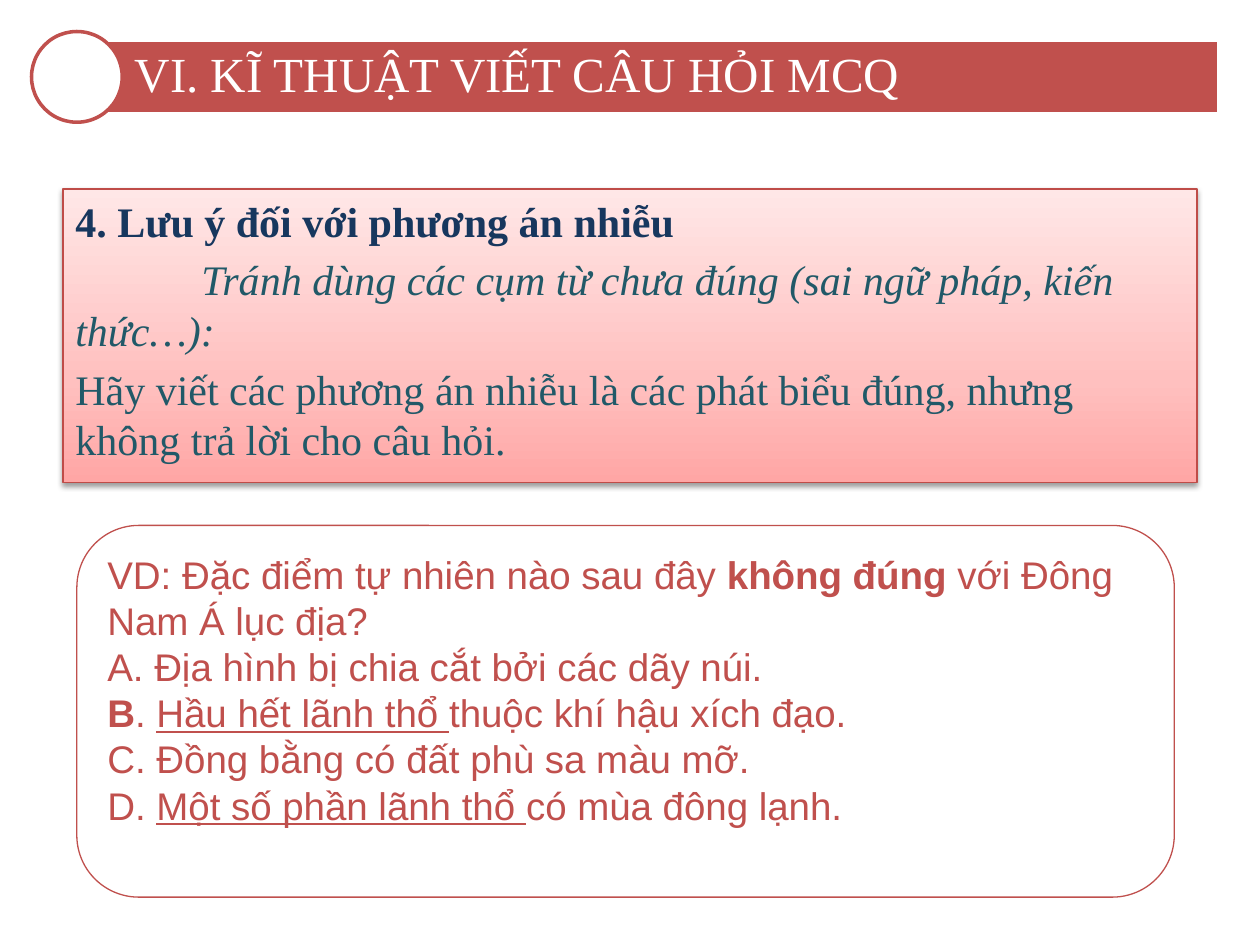
from lxml.etree import SubElement
from pptx import Presentation
from pptx.dml.color import RGBColor as RGB
from pptx.enum.shapes import MSO_SHAPE as SHAPE
from pptx.enum.text import MSO_ANCHOR as ANCHOR, PP_ALIGN as ALIGN
from pptx.oxml import parse_xml
from pptx.oxml.ns import nsdecls, qn
from pptx.util import Inches, Pt

COLORS = {
    "white": "FFFFFF",
    "red": "C0504D",
    "border": "BF4C48",
    "navy": "17375E",
    "teal": "215968",
    "shadow": "000000",
}
PINKS = [(0, "FFA6A5"), (35, "FFC0BF"), (100, "FFE7E7")]
SERIF, SANS = "Times New Roman", "Arial"


class Deck:
    def __init__(self):
        self.prs = Presentation()
        self.prs.slide_width, self.prs.slide_height = Inches(10), Inches(7.5)
        self.slide = self.prs.slides.add_slide(self.prs.slide_layouts[6])

    def shape(self, kind, box, line, width, fill=None):
        s = self.slide.shapes.add_shape(kind, *map(Inches, box))
        s.shadow.inherit = False
        s.line.color.rgb = RGB.from_string(COLORS[line])
        s.line.width = Pt(width)
        if fill:
            s.fill.solid()
            s.fill.fore_color.rgb = RGB.from_string(COLORS[fill])
        else:
            s.fill.background()
        return s

    def gradient(self, s, stops, angle):
        s.fill.gradient()
        grad = s._element.spPr.find(qn("a:gradFill"))
        gs_list = grad.find(qn("a:gsLst"))
        for gs in list(gs_list):
            gs_list.remove(gs)
        for pos, color in stops:
            gs = SubElement(gs_list, qn("a:gs"), pos=str(pos * 1000))
            SubElement(gs, qn("a:srgbClr"), val=color)
        grad.find(qn("a:lin")).set("ang", str(angle * 60000))

    def drop_shadow(self, s, blur, dist, alpha):
        effects = s._element.spPr.find(qn("a:effectLst"))
        effects.append(parse_xml(
            f'<a:outerShdw {nsdecls("a")} blurRad="{Pt(blur)}" dist="{Pt(dist)}" '
            f'dir="5400000" rotWithShape="0"><a:srgbClr val="{COLORS["shadow"]}">'
            f'<a:alpha val="{alpha * 1000}"/></a:srgbClr></a:outerShdw>'))

    def text(self, s, paragraphs, font, size, color, anchor=ANCHOR.MIDDLE,
             insets=(0.1, 0.05, 0.1, 0.05), before=0, spacing=1.0):
        tf = s.text_frame
        tf.word_wrap = True
        tf.vertical_anchor = anchor
        (tf.margin_left, tf.margin_top,
         tf.margin_right, tf.margin_bottom) = map(Inches, insets)
        for i, runs in enumerate(paragraphs):
            p = tf.paragraphs[0] if i == 0 else tf.add_paragraph()
            p.alignment = ALIGN.LEFT
            p.space_before = Pt(before)
            p.line_spacing = spacing
            for words, style in runs:
                r = p.add_run()
                r.text = words
                r.font.name, r.font.size = font, Pt(size)
                r.font.color.rgb = RGB.from_string(COLORS[style.get("color", color)])
                r.font.bold = style.get("bold", False)
                r.font.italic = style.get("italic", False)
                r.font.underline = style.get("underline", False)
        return tf

    def indent(self, p, inches):
        p._p.get_or_add_pPr().set("indent", str(Inches(inches)))


def main():
    plain, bold, underline = {}, {"bold": True}, {"underline": True}
    deck = Deck()

    banner = deck.shape(SHAPE.RECTANGLE, (0.61, 0.32, 9.06, 0.58), "white", 2, "red")
    deck.text(banner, [[("VI. KĨ THUẬT VIẾT CÂU HỎI MCQ", plain)]], SERIF, 28, "white",
              insets=(0.46, 0.06, 0.06, 0.06), spacing=0.9)
    deck.shape(SHAPE.OVAL, (0.25, 0.25, 0.72, 0.72), "red", 2, "white")

    advice = deck.shape(SHAPE.RECTANGLE, (0.5, 1.5, 9, 2.33), "border", 0.75)
    deck.gradient(advice, PINKS, 270)
    deck.drop_shadow(advice, 3.1, 1.6, 38)
    tf = deck.text(advice, [
        [("4. Lưu ý đối với phương án nhiễu", {"bold": True, "color": "navy"})],
        [("Tránh dùng các cụm từ chưa đúng (sai ngữ pháp, kiến thức…):", {"italic": True})],
        [("Hãy viết các phương án nhiễu là các phát biểu đúng, "
          "nhưng không trả lời cho câu hỏi.", plain)],
    ], SERIF, 24, "teal", ANCHOR.TOP, before=4.8)
    deck.indent(tf.paragraphs[1], 1)

    example = deck.shape(SHAPE.ROUNDED_RECTANGLE, (0.61, 4.17, 8.71, 2.95), "red", 0.75)
    deck.text(example, [
        [("VD: Đặc điểm tự nhiên nào sau đây ", plain), ("không đúng", bold),
         (" với Đông Nam Á lục địa?", plain)],
        [("A. Địa hình bị chia cắt bởi các dãy núi.", plain)],
        [("B", bold), (". ", plain), ("Hầu hết lãnh thổ ", underline),
         ("thuộc khí hậu xích đạo.", plain)],
        [("C. Đồng bằng có đất phù sa màu mỡ.", plain)],
        [("D. ", plain), ("Một số phần lãnh thổ ", underline),
         ("có mùa đông lạnh.", plain)],
    ], SANS, 22, "red", insets=(0.1, 0.05, 0.1, 0.4))

    deck.prs.save("out.pptx")


if __name__ == "__main__":
    main()
